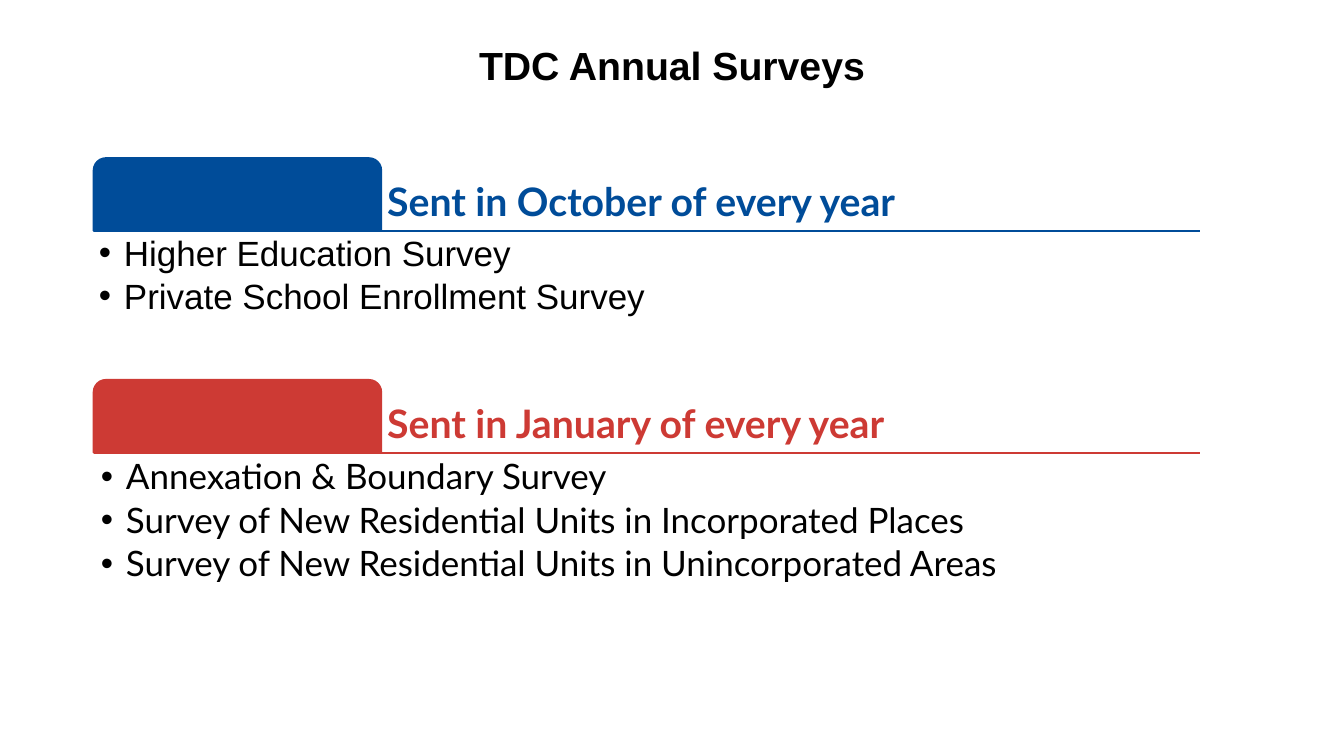
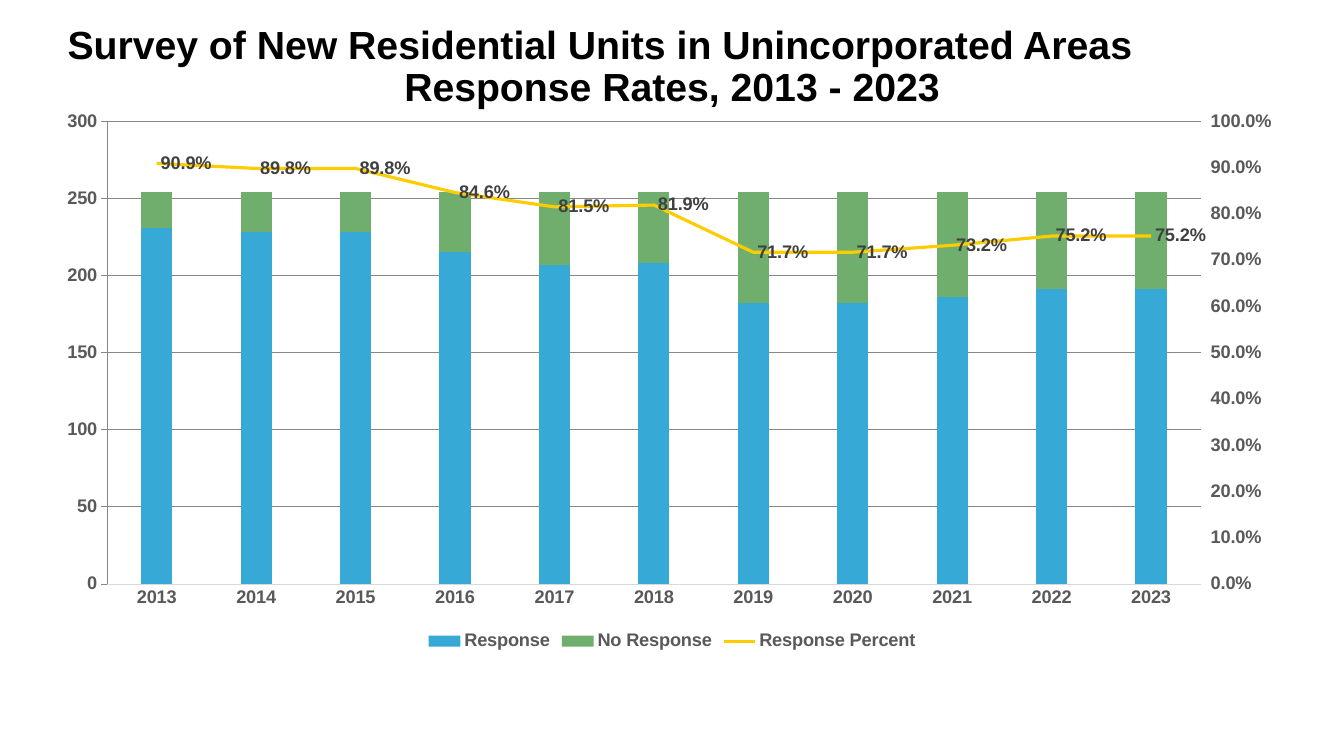
from dataclasses import dataclass

from lxml import etree
from pptx import Presentation
from pptx.chart.axis import ValueAxis
from pptx.chart.data import CategoryChartData
from pptx.dml.color import RGBColor
from pptx.enum.chart import XL_CHART_TYPE, XL_LABEL_POSITION, XL_LEGEND_POSITION
from pptx.enum.chart import XL_MARKER_STYLE, XL_TICK_MARK
from pptx.enum.shapes import MSO_CONNECTOR, MSO_SHAPE
from pptx.enum.text import MSO_ANCHOR, PP_ALIGN
from pptx.oxml import parse_xml
from pptx.oxml.ns import nsdecls, qn
from pptx.util import Inches, Pt

STACKED_COLUMNS = XL_CHART_TYPE.COLUMN_STACKED
LABEL_RIGHT = XL_LABEL_POSITION.RIGHT
LEGEND_BOTTOM = XL_LEGEND_POSITION.BOTTOM
NO_MARKER = XL_MARKER_STYLE.NONE
NO_TICK, TICK_OUTSIDE = XL_TICK_MARK.NONE, XL_TICK_MARK.OUTSIDE
STRAIGHT = MSO_CONNECTOR.STRAIGHT
FOLDER_TAB = MSO_SHAPE.ROUND_2_SAME_RECTANGLE
TOP, MIDDLE, BOTTOM = MSO_ANCHOR.TOP, MSO_ANCHOR.MIDDLE, MSO_ANCHOR.BOTTOM
LEFT, CENTER = PP_ALIGN.LEFT, PP_ALIGN.CENTER


@dataclass(frozen=True)
class Theme:
    black: RGBColor = RGBColor.from_string("000000")
    blue: RGBColor = RGBColor.from_string("004C99")
    red: RGBColor = RGBColor.from_string("CD3A34")
    response: RGBColor = RGBColor.from_string("36A9D6")
    no_response: RGBColor = RGBColor.from_string("70AE6E")
    percent: RGBColor = RGBColor.from_string("FFCC00")
    axis_text: RGBColor = RGBColor.from_string("595959")
    label_text: RGBColor = RGBColor.from_string("404040")
    grid: RGBColor = RGBColor.from_string("D9D9D9")
    main_font: str = "Arial"
    accent_font: str = "Lato"
    title_size: Pt = Pt(28)
    bullet_size: Pt = Pt(25)
    chart_size: Pt = Pt(13)


THEME = Theme()


def set_font(font, size, color, bold=False, name=THEME.main_font):
    font.size, font.bold, font.name = size, bold, name
    font.color.rgb = color


def add_text(slide, box, lines, size, color, bold=False, name=THEME.main_font,
             anchor=TOP, inset=0.05, align=LEFT, bullets=False):
    """Add a text box with one paragraph per line and return its paragraphs."""
    frame = slide.shapes.add_textbox(*map(Inches, box)).text_frame
    frame.word_wrap = True
    frame.vertical_anchor = anchor
    frame.margin_left = frame.margin_right = Inches(inset)
    frame.margin_top = frame.margin_bottom = Inches(inset)
    frame.text = "\n".join(lines)
    for paragraph in frame.paragraphs:
        paragraph.alignment = align
        paragraph.line_spacing = 0.9
        if bullets:
            paragraph.space_after = Pt(4)
            properties = paragraph._p.get_or_add_pPr()
            properties.set("marL", str(Inches(0.25)))
            properties.set("indent", str(Inches(-0.25)))
            etree.SubElement(properties, qn("a:buFont"), typeface="Arial")
            etree.SubElement(properties, qn("a:buChar"), char="•")
        set_font(paragraph.font, size, color, bold, name)
    return frame.paragraphs


presentation = Presentation()
presentation.slide_width = Inches(13.33)
presentation.slide_height = Inches(7.5)

# Both slides share the title style
titles = [
    ["TDC Annual Surveys"],
    ["Survey of New Residential Units in Unincorporated Areas",
     "Response Rates, 2013 - 2023"],
]
slides = []
for title_lines in titles:
    slide = presentation.slides.add_slide(presentation.slide_layouts[6])
    title = add_text(slide, (0, 0.13, 13.33, 1.09), title_lines, THEME.title_size,
                     THEME.black, bold=True, anchor=MIDDLE, align=CENTER)
    slides.append(slide)
surveys_slide, rates_slide = slides

# The first line of the long title starts near the left edge
title[0].alignment = LEFT
title[0]._p.get_or_add_pPr().set("marL", str(Inches(0.62)))

# Survey groups: tab, heading, rule and list
groups = [
    ("Sent in October of every year", THEME.blue, THEME.main_font, 0.05,
     ["Higher Education Survey", "Private School Enrollment Survey"]),
    ("Sent in January of every year", THEME.red, THEME.accent_font, 0.07,
     ["Annexation & Boundary Survey",
      "Survey of New Residential Units in Incorporated Places",
      "Survey of New Residential Units in Unincorporated Areas"]),
]
group_left, group_width, group_step = 0.93, 10.97, 2.2
tab_width, tab_height = 2.85, 0.72
for index, (heading, color, list_font, list_inset, surveys) in enumerate(groups):
    top = 1.57 + index * group_step
    rule_top = top + tab_height
    rule = surveys_slide.shapes.add_connector(
        STRAIGHT, Inches(group_left), Inches(rule_top),
        Inches(group_left + group_width), Inches(rule_top))
    rule.line.color.rgb = color
    rule.line.width = Pt(1.5)
    etree.SubElement(rule._element.spPr, qn("a:effectLst"))

    tab = surveys_slide.shapes.add_shape(
        FOLDER_TAB, Inches(group_left), Inches(top), Inches(tab_width), Inches(tab_height))
    tab.shadow.inherit = False
    tab.fill.solid()
    tab.fill.fore_color.rgb = color
    tab.line.color.rgb = color
    tab.line.width = Pt(1.5)

    add_text(surveys_slide,
             (group_left + tab_width, top, group_width - tab_width, tab_height),
             [heading], THEME.title_size, color, bold=True, name=THEME.accent_font,
             anchor=BOTTOM, inset=0.06)
    add_text(surveys_slide, (group_left, rule_top, group_width, 2 * tab_height),
             surveys, THEME.bullet_size, THEME.black, name=list_font,
             inset=list_inset, bullets=True)

# Response chart: stacked counts, with the rate as a line on a second axis
responses = [231, 228, 228, 215, 207, 208, 182, 182, 186, 191, 191]
no_responses = [23, 26, 26, 39, 47, 46, 72, 72, 68, 63, 63]
rates = [0.909, 0.898, 0.898, 0.846, 0.815, 0.819, 0.717, 0.717, 0.732, 0.752, 0.752]
chart_data = CategoryChartData()
chart_data.categories = [str(year) for year in range(2013, 2024)]
chart_data.add_series("Response", responses)
chart_data.add_series("No Response", no_responses)
chart_data.add_series("Response Percent", rates, number_format="0.0%")
chart = rates_slide.shapes.add_chart(
    STACKED_COLUMNS, Inches(0.48), Inches(1), Inches(12.37), Inches(5.5), chart_data).chart
chart.has_title = False
set_font(chart.font, THEME.chart_size, THEME.axis_text, bold=True)
chart.has_legend = True
chart.legend.position = LEGEND_BOTTOM
chart.legend.include_in_layout = False
set_font(chart.legend.font, THEME.chart_size, THEME.axis_text, bold=True)

columns = chart.plots[0]
columns.gap_width, columns.overlap = 219, 100
columns.vary_by_categories = False
for series, color in zip(columns.series, (THEME.response, THEME.no_response)):
    series.format.fill.solid()
    series.format.fill.fore_color.rgb = color

plot_area = chart._chartSpace.chart.plotArea
bar_element = plot_area.find(qn("c:barChart"))
rate_element = bar_element.findall(qn("c:ser"))[-1]
for element in rate_element.findall(qn("c:invertIfNegative")):
    rate_element.remove(element)
line_element = parse_xml(
    f'<c:lineChart {nsdecls("c")}><c:grouping val="standard"/><c:varyColors val="0"/>'
    '<c:marker val="1"/><c:axId val="5001"/><c:axId val="5002"/></c:lineChart>')
line_element.insert(2, rate_element)
bar_element.addnext(line_element)

right_axis_element = parse_xml(
    f'<c:valAx {nsdecls("c")}><c:axId val="5002"/>'
    '<c:scaling><c:orientation val="minMax"/></c:scaling><c:delete val="0"/>'
    '<c:axPos val="r"/><c:crossAx val="5001"/><c:crosses val="max"/></c:valAx>')
hidden_axis_element = parse_xml(
    f'<c:catAx {nsdecls("c")}><c:axId val="5001"/>'
    '<c:scaling><c:orientation val="minMax"/></c:scaling><c:delete val="1"/>'
    '<c:axPos val="b"/><c:crossAx val="5002"/><c:crosses val="autoZero"/></c:catAx>')
left_axis_element = plot_area.find(qn("c:valAx"))
left_axis_element.addnext(right_axis_element)
right_axis_element.addnext(hidden_axis_element)

for element in plot_area.findall(qn("c:layout")):
    plot_area.remove(element)
plot_area.insert(0, parse_xml(
    f'<c:layout {nsdecls("c")}><c:manualLayout><c:layoutTarget val="inner"/>'
    '<c:xMode val="edge"/><c:yMode val="edge"/><c:x val="0.047"/><c:y val="0.037"/>'
    '<c:w val="0.877"/><c:h val="0.835"/></c:manualLayout></c:layout>'))

rate_series = chart.plots[1].series[0]
rate_series.smooth = False
rate_series.marker.style = NO_MARKER
rate_series.format.line.color.rgb = THEME.percent
rate_series.format.line.width = Pt(2.25)
rate_labels = rate_series.data_labels
rate_labels.show_value = True
rate_labels.position = LABEL_RIGHT
rate_labels.number_format = "0.0%"
rate_labels.number_format_is_linked = False
set_font(rate_labels.font, THEME.chart_size, THEME.label_text, bold=True)

year_axis, count_axis = chart.category_axis, chart.value_axis
rate_axis = ValueAxis(right_axis_element)
for axis, tick in ((year_axis, NO_TICK), (count_axis, NO_TICK), (rate_axis, TICK_OUTSIDE)):
    axis.major_tick_mark = tick
    axis.minor_tick_mark = NO_TICK
    axis.format.line.fill.background()
    set_font(axis.tick_labels.font, THEME.chart_size, THEME.axis_text, bold=True)
for axis, maximum, step, number_format in ((count_axis, 260, 50, "0"),
                                           (rate_axis, 1, 0.1, "0.0%")):
    axis.minimum_scale, axis.maximum_scale, axis.major_unit = 0, maximum, step
    axis.tick_labels.number_format = number_format
    axis.tick_labels.number_format_is_linked = False
rate_axis.has_major_gridlines = False
count_axis.has_major_gridlines = True
for line in (year_axis.format.line, count_axis.major_gridlines.format.line):
    line.color.rgb = THEME.grid
    line.width = Pt(0.75)

presentation.save("out.pptx")
